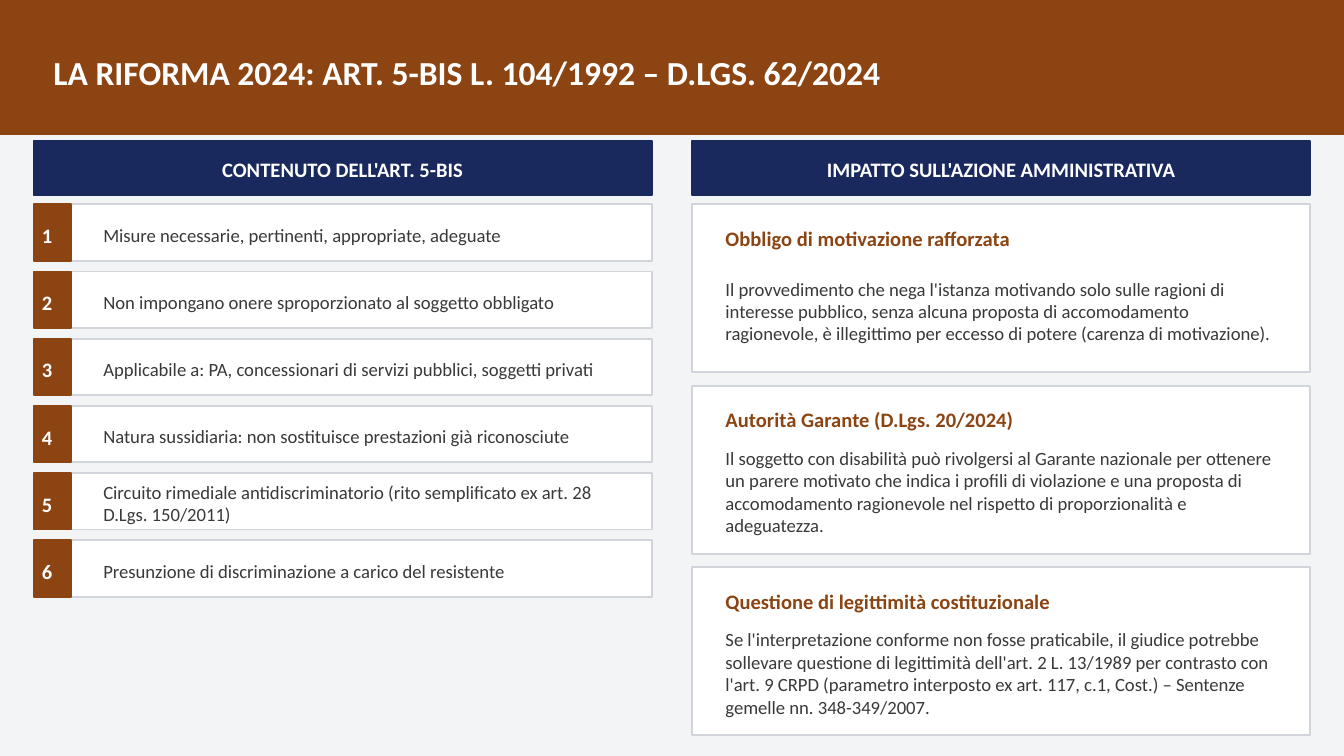
from pptx import Presentation
from pptx.dml.color import RGBColor
from pptx.enum import shapes, text
from pptx.util import Inches, Pt

COLORS = {
    "brown": "8B4412",
    "navy": "19295D",
    "white": "FFFFFF",
    "border": "D1D5DB",
    "body": "393939",
    "background": "F3F4F6",
}
FORMATS = {
    "title": {"size": Pt(18), "bold": True},
    "heading": {"size": Pt(11), "bold": True},
    "body": {"size": Pt(10), "bold": False},
}
MEASURES = [
    ("Misure necessarie, pertinenti, appropriate, adeguate", 1),
    ("Non impongano onere sproporzionato al soggetto obbligato", 1),
    ("Applicabile a: PA, concessionari di servizi pubblici, soggetti privati", 1),
    ("Natura sussidiaria: non sostituisce prestazioni già riconosciute", 1),
    ("Circuito rimediale antidiscriminatorio (rito semplificato ex art. 28 D.Lgs. 150/2011)", 2),
    ("Presunzione di discriminazione a carico del resistente", 1),
]
IMPACTS = [
    (
        "Obbligo di motivazione rafforzata",
        "Il provvedimento che nega l'istanza motivando solo sulle ragioni di interesse pubblico, "
        "senza alcuna proposta di accomodamento ragionevole, è illegittimo per eccesso di potere "
        "(carenza di motivazione).",
        3,
    ),
    (
        "Autorità Garante (D.Lgs. 20/2024)",
        "Il soggetto con disabilità può rivolgersi al Garante nazionale per ottenere un parere "
        "motivato che indica i profili di violazione e una proposta di accomodamento ragionevole "
        "nel rispetto di proporzionalità e adeguatezza.",
        4,
    ),
    (
        "Questione di legittimità costituzionale",
        "Se l'interpretazione conforme non fosse praticabile, il giudice potrebbe sollevare "
        "questione di legittimità dell'art. 2 L. 13/1989 per contrasto con l'art. 9 CRPD "
        "(parametro interposto ex art. 117, c.1, Cost.) – Sentenze gemelle nn. 348-349/2007.",
        4,
    ),
]


def add_panel(slide, left, top, width, height, fill, line):
    shape = slide.shapes.add_shape(
        shapes.MSO_SHAPE.RECTANGLE, Inches(left), Inches(top), Inches(width), Inches(height)
    )
    shape.shadow.inherit = False
    shape.fill.solid()
    shape.fill.fore_color.rgb = RGBColor.from_string(COLORS[fill])
    shape.line.color.rgb = RGBColor.from_string(COLORS[line])
    shape.line.width = Pt(1)


def add_text(slide, left, top, width, height, words, style, color, align="LEFT", margins=(0.1, 0.1)):
    shape = slide.shapes.add_textbox(Inches(left), Inches(top), Inches(width), Inches(height))
    frame_format = {
        "word_wrap": True,
        "auto_size": text.MSO_AUTO_SIZE.SHAPE_TO_FIT_TEXT,
        "margin_left": Inches(margins[0]),
        "margin_right": Inches(margins[1]),
    }
    for name, value in frame_format.items():
        setattr(shape.text_frame, name, value)
    paragraph = shape.text_frame.paragraphs[0]
    paragraph.alignment = getattr(text.PP_ALIGN, align)
    run = paragraph.add_run()
    run.text = words
    for name, value in {"name": "Calibri", **FORMATS[style]}.items():
        setattr(run.font, name, value)
    run.font.color.rgb = RGBColor.from_string(COLORS[color])


def add_body(slide, left, middle, width, words, lines):
    height = 0.07 + 0.18 * lines
    add_text(slide, left, middle - height / 2, width, height, words, "body", "body")


def add_title_band(slide, left, top, width, height, words):
    add_panel(slide, left, top, width, height, "brown", "brown")
    add_text(slide, left + 0.3, top + 0.34, width - 0.6, 0.35, words, "title", "white")


def add_column_header(slide, left, top, width, height, words):
    add_panel(slide, left, top, width, height, "navy", "navy")
    add_text(slide, left + 0.1, top + 0.07, width - 0.2, 0.25, words, "heading", "white", "CENTER")


def add_measure(slide, left, top, width, height, number, words, lines):
    add_panel(slide, left, top, width, height, "white", "border")
    add_panel(slide, left, top, 0.28, height, "brown", "brown")
    add_text(
        slide, left + 0.05, top + 0.09, 0.18, 0.25, str(number), "heading", "white", "CENTER", (0, 0.08)
    )
    add_body(slide, left + 0.42, top + height / 2 + 0.01, width - 0.55, words, lines)


def add_impact(slide, left, top, width, height, heading, words, lines):
    add_panel(slide, left, top, width, height, "white", "border")
    add_text(slide, left + 0.15, top + 0.11, width - 0.3, 0.25, heading, "heading", "brown")
    add_body(slide, left + 0.15, top + 0.8, width - 0.3, words, lines)


def add_measures_column(slide, left, top, width):
    add_column_header(slide, left, top, width, 0.4, "CONTENUTO DELL'ART. 5-BIS")
    for index, (words, lines) in enumerate(MEASURES):
        add_measure(slide, left, top + 0.47 + 0.5 * index, width, 0.42, index + 1, words, lines)


def add_impacts_column(slide, left, top, width):
    add_column_header(slide, left, top, width, 0.4, "IMPATTO SULL'AZIONE AMMINISTRATIVA")
    for index, impact in enumerate(IMPACTS):
        add_impact(slide, left, top + 0.47 + 1.35 * index, width, 1.25, *impact)


def main():
    presentation = Presentation()
    presentation.slide_width = Inches(10)
    presentation.slide_height = Inches(10 * 9 / 16)
    slide = presentation.slides.add_slide(presentation.slide_layouts[6])
    slide.background.fill.solid()
    slide.background.fill.fore_color.rgb = RGBColor.from_string(COLORS["background"])
    add_title_band(slide, 0, 0, 10, 1, "LA RIFORMA 2024: ART. 5-BIS L. 104/1992 – D.LGS. 62/2024")
    add_measures_column(slide, 0.25, 1.05, 4.6)
    add_impacts_column(slide, 5.15, 1.05, 4.6)
    presentation.save("out.pptx")


if __name__ == "__main__":
    main()
